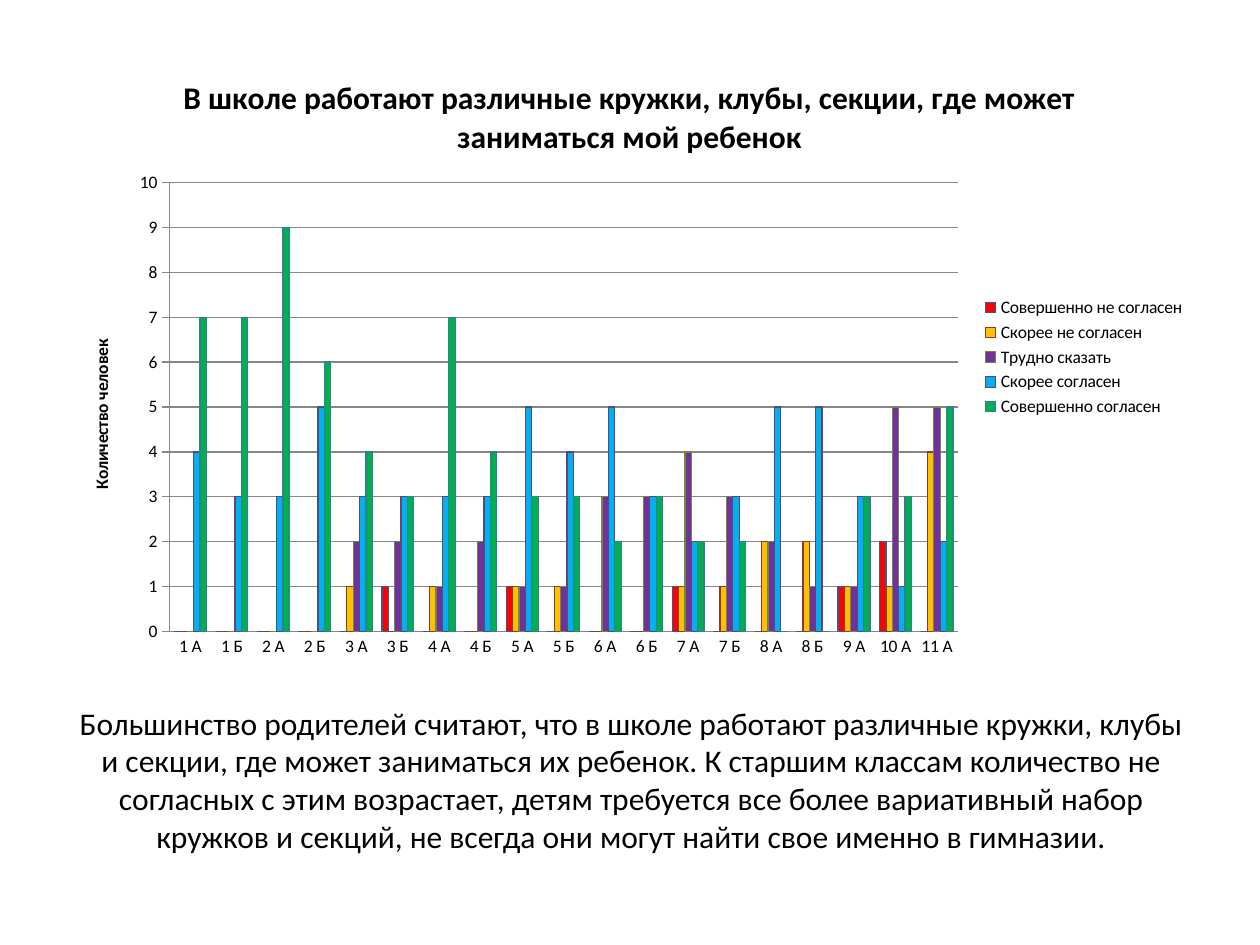
from dataclasses import dataclass

from lxml.etree import SubElement
from pptx import Presentation
from pptx.chart.data import CategoryChartData
from pptx.dml.color import RGBColor
from pptx.enum.chart import XL_CHART_TYPE as CT, XL_LEGEND_POSITION as LP, XL_TICK_MARK as TM
from pptx.enum.text import MSO_ANCHOR, PP_ALIGN
from pptx.oxml import parse_xml
from pptx.oxml.ns import nsdecls, qn
from pptx.util import Inches, Pt

# Content
HEADING = "В школе работают различные кружки, клубы, секции, где может заниматься мой ребенок"
AXIS_TITLE = "Количество человек"
CONCLUSION = (
    "Большинство родителей считают, что в школе работают различные кружки, клубы и секции, "
    "где может заниматься их ребенок. К старшим классам количество не согласных с этим "
    "возрастает, детям требуется все более вариативный набор кружков и секций, "
    "не всегда они могут найти свое именно в гимназии."
)
CLASSES = [f"{n} {letter}" for n in range(1, 9) for letter in "АБ"] + ["9 А", "10 А", "11 А"]
# Answer, fill, outline, number of people in each class
ANSWERS = [
    ("Совершенно не согласен", "FF0000", "385D8A",
     [0, 0, 0, 0, 0, 1, 0, 0, 1, 0, 0, 0, 1, 0, 0, 0, 1, 2, 0]),
    ("Скорее не согласен", "FFC000", "8C3836",
     [0, 0, 0, 0, 1, 0, 1, 0, 1, 1, 0, 0, 1, 1, 2, 2, 1, 1, 4]),
    ("Трудно сказать", "7030A0", "71893F",
     [0, 0, 0, 0, 2, 2, 1, 2, 1, 1, 3, 3, 4, 3, 2, 1, 1, 5, 5]),
    ("Скорее согласен", "00B0F0", "5C4776",
     [4, 3, 3, 5, 3, 3, 3, 3, 5, 4, 5, 3, 2, 3, 5, 5, 3, 1, 2]),
    ("Совершенно согласен", "00B050", "357D91",
     [7, 7, 9, 6, 4, 3, 7, 4, 3, 3, 2, 3, 2, 2, 0, 0, 3, 3, 5]),
]


@dataclass(frozen=True)
class Theme:
    font: str = "Calibri"
    text: str = "000000"
    grid: str = "868686"
    large: int = 18
    small: int = 10


T = Theme()
LEFT, WIDTH = 0.51, 9
CHART_TOP, CHART_H = 0.36, 4.95
TEXT_TOP, TEXT_H = 5.56, 1.25


def rgb(value):
    return RGBColor.from_string(value)


def style(font, size, bold=False):
    font.name, font.size, font.bold = T.font, Pt(size), bold
    font.color.rgb = rgb(T.text)


def put_text(tf, text, size, bold=False):
    tf.text = text
    p = tf.paragraphs[0]
    p.alignment = PP_ALIGN.CENTER
    style(p.runs[0].font, size, bold)


def place(part, index, inner=False, **shares):
    """Fix a chart part's position, in shares of the chart's size."""
    layout = part.find(qn("c:layout"))
    if layout is None:
        layout = parse_xml(f"<c:layout {nsdecls('c')}/>")
        part.insert(index, layout)
    manual = SubElement(layout, qn("c:manualLayout"))
    settings = {"layoutTarget": "inner"} if inner else {}
    settings.update(xMode="edge", yMode="edge", **shares)
    for tag, value in settings.items():
        SubElement(manual, qn(f"c:{tag}")).set("val", str(value))


prs = Presentation()
prs.slide_width, prs.slide_height = Inches(10), Inches(7.5)
s = prs.slides.add_slide(prs.slide_layouts[5])

# Conclusion in the title placeholder
title = s.shapes.title
title.left, title.top = Inches(LEFT), Inches(TEXT_TOP)
title.width, title.height = Inches(WIDTH), Inches(TEXT_H)
tf = title.text_frame
tf.word_wrap, tf.vertical_anchor = True, MSO_ANCHOR.MIDDLE
put_text(tf, CONCLUSION, T.large)

# Chart data
data = CategoryChartData(number_format="General")
data.categories = CLASSES
for name, _, _, counts in ANSWERS:
    data.add_series(name, counts)
chart = s.shapes.add_chart(CT.COLUMN_CLUSTERED, Inches(LEFT), Inches(CHART_TOP),
                           Inches(WIDTH), Inches(CHART_H), data).chart
style(chart.font, T.small)

# Chart title and legend
chart.has_title = True
put_text(chart.chart_title.text_frame, HEADING, T.large, bold=True)
chart.has_legend = True
chart.legend.position = LP.RIGHT
chart.legend.include_in_layout = False

# Axes
cat, val = chart.category_axis, chart.value_axis
cat.major_tick_mark = cat.minor_tick_mark = val.minor_tick_mark = TM.NONE
val.major_tick_mark = TM.OUTSIDE
val.minimum_scale, val.maximum_scale, val.major_unit = 0, 10, 1
val.has_major_gridlines = True
put_text(val.axis_title.text_frame, AXIS_TITLE, T.small, bold=True)
for line in (cat.format.line, val.format.line, val.major_gridlines.format.line):
    line.color.rgb = rgb(T.grid)
    line.width = Pt(0.75)

# Columns
plot = chart.plots[0]
plot.gap_width, plot.overlap, plot.vary_by_categories = 150, 0, False
for series, (_, fill, outline, _) in zip(plot.series, ANSWERS):
    series.format.fill.solid()
    series.format.fill.fore_color.rgb = rgb(fill)
    series.format.line.color.rgb = rgb(outline)
    series.format.line.width = Pt(0.75)

# Positions inside the chart
chart_xml = chart.element.find(qn("c:chart"))
place(chart_xml.find(qn("c:title")), 1, x=0.1, y=0.04)
place(chart_xml.find(qn("c:plotArea")), 0, inner=True, x=0.093, y=0.22, w=0.695, h=0.72)

prs.save("out.pptx")
